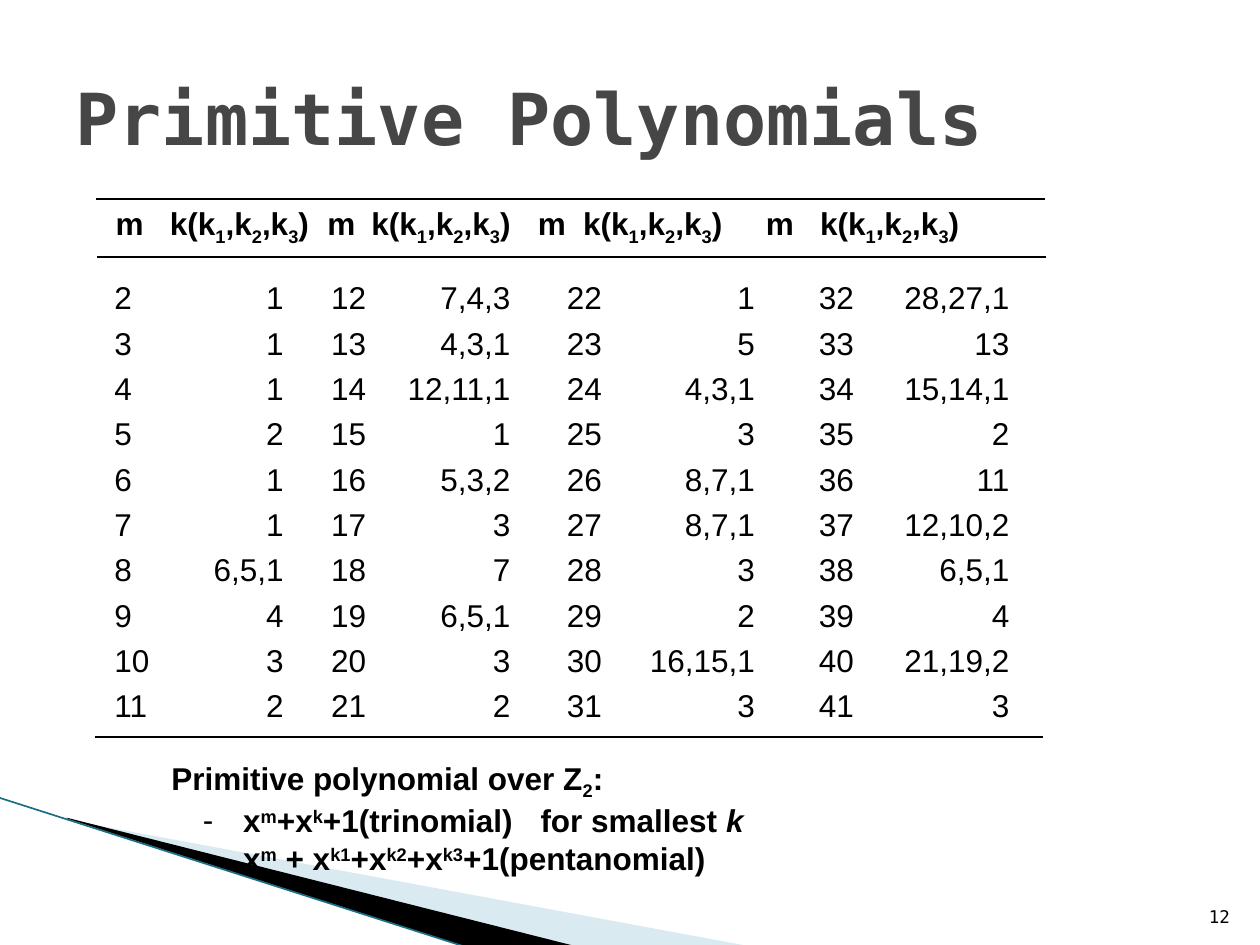
from pptx import Presentation
from pptx import util as u
from pptx.dml.color import RGBColor
from pptx.enum import shapes, text
from pptx.oxml import parse_xml
from pptx.oxml.ns import nsdecls, qn
from lxml import etree

BLACK = RGBColor(0x00, 0x00, 0x00)
GREY = RGBColor(0x46, 0x46, 0x46)
PALE_BLUE = RGBColor(0xA0, 0xCB, 0xDC)
EDGE_TEAL = RGBColor(0x1B, 0x6E, 0x87)
SANS, MONO = "Arial", "DejaVu Sans Mono"
SUB, SUPER = "-25000", "30000"


class SlideBuilder:
    """Holds the style and the current slide."""

    def __init__(self, deck):
        self.slide = deck.slides.add_slide(deck.slide_layouts[1])

    def format_span(self, span, size=18, font=SANS, color=BLACK, bold=False):
        span.font.size = u.Pt(size)
        span.font.name = font
        span.font.bold = bold
        span.font.color.rgb = color

    def scripted(self, para, content, baseline):
        """Every second part between bars is raised or lowered."""
        for index, part in enumerate(content.split("|")):
            span = para.add_run()
            span.text = part
            self.format_span(span, bold=True)
            if index % 2:
                span._r.get_or_add_rPr().set("baseline", baseline)

    def tab_stops(self, para, stops):
        tabs = etree.SubElement(para._p.get_or_add_pPr(), qn("a:tabLst"))
        for stop in stops:
            etree.SubElement(tabs, qn("a:tab"), pos=str(u.Inches(stop)), algn="l")

    def place(self, shape, left, top, width, height):
        shape.left, shape.top = u.Inches(left), u.Inches(top)
        shape.width, shape.height = u.Inches(width), u.Inches(height)
        self.slide.shapes._spTree.append(shape._element)  # bring to front

    def title(self, content, *area):
        box = self.slide.shapes.title
        self.place(box, *area)
        box.text_frame.text = content
        box.text_frame.vertical_anchor = text.MSO_ANCHOR.MIDDLE
        para = box.text_frame.paragraphs[0]
        para.alignment = text.PP_ALIGN.LEFT
        self.format_span(para.runs[0], 41, MONO, GREY, True)

    def body(self, heading, items, *area):
        box = self.slide.placeholders[1]
        self.place(box, *area)
        frame = box.text_frame
        frame.auto_size = text.MSO_AUTO_SIZE.NONE
        for index, content in enumerate([heading] + items):
            para = frame.add_paragraph() if index else frame.paragraphs[0]
            para.space_before = u.Pt(0)
            props = para._p.get_or_add_pPr()
            margin, indent = (0.57, -0.32) if index else (0, 0)
            props.set("marL", str(u.Inches(margin)))
            props.set("indent", str(u.Inches(indent)))
            if index:
                para.level = 1
                etree.SubElement(props, qn("a:buChar"), char="-")
            else:
                etree.SubElement(props, qn("a:buNone"))
            if "\t" in content:
                self.tab_stops(para, [2.93])
            self.scripted(para, content, SUPER if index else SUB)
        return frame

    def text_box(self, left, top, width, height):
        box = self.slide.shapes.add_textbox(
            u.Inches(left), u.Inches(top), u.Inches(width), u.Inches(height))
        box.text_frame.word_wrap = True
        return box.text_frame

    def column(self, left, width, values, alignment):
        frame = self.text_box(left, 2.1, width, 3.71)
        if alignment == text.PP_ALIGN.RIGHT:
            frame.margin_left = 0  # room for the longest exponents
        else:
            frame.margin_right = 0
        frame.text = "\n".join(values)
        for para in frame.paragraphs:
            para.alignment = alignment
            para.line_spacing = 1.2
            self.format_span(para.runs[0])

    def header(self, groups, stops, *area):
        para = self.text_box(*area).paragraphs[0]
        self.tab_stops(para, stops)
        self.scripted(para, "\t".join(groups), SUB)

    def page_number(self, number, *area):
        frame = self.text_box(*area)
        frame.vertical_anchor = text.MSO_ANCHOR.BOTTOM
        frame.text = number
        frame.paragraphs[0].alignment = text.PP_ALIGN.RIGHT
        self.format_span(frame.paragraphs[0].runs[0], 10, MONO)

    def line(self, x1, y1, x2, y2, color=BLACK, width=1):
        line = self.slide.shapes.add_connector(
            shapes.MSO_CONNECTOR.STRAIGHT,
            u.Inches(x1), u.Inches(y1), u.Inches(x2), u.Inches(y2))
        line.line.color.rgb = color
        line.line.width = u.Pt(width)
        line._element.spPr.append(parse_xml(f"<a:effectLst {nsdecls('a')}/>"))

    def wedge(self, points, color, alpha=None):
        corners = [(u.Inches(x), u.Inches(y)) for x, y in points]
        builder = self.slide.shapes.build_freeform(*corners[0])
        builder.add_line_segments(corners[1:], close=True)
        shape = builder.convert_to_shape()
        shape.shadow.inherit = False
        shape.fill.solid()
        shape.fill.fore_color.rgb = color
        shape.line.fill.background()
        if alpha:
            fill = shape._element.spPr.find(qn("a:solidFill"))
            etree.SubElement(fill[0], qn("a:alpha"), val=str(alpha * 1000))


def main():
    deck = Presentation()
    deck.slide_width, deck.slide_height = u.Inches(10), u.Inches(7.5)
    page = SlideBuilder(deck)

    # Corner decoration
    page.wedge([(0.55, 6.51), (5.95, 7.51), (4.56, 7.51), (0.55, 6.5)], PALE_BLUE, 40)
    page.wedge([(0.53, 6.49), (4.57, 7.51), (3.72, 7.52), (0.54, 6.5)], BLACK)
    page.line(-0.01, 6.33, 3.71, 7.52, EDGE_TEAL, 0.95)

    # Title, page number and explanation
    page.title("Primitive Polynomials", 0.5, 0.3, 9, 1.25)
    page.page_number("12", 9.46, 7.01, 0.4, 0.4)
    notes = page.body(
        "Primitive polynomial over Z|2|:",
        ["x|m|+x|k|+1(trinomial)\tfor smallest ",
         "x|m| + x|k1|+x|k2|+x|k3|+1(pentanomial)"],
        1.26, 5.97, 7.61, 1.23)
    variable = notes.paragraphs[1].add_run()
    variable.text = "k"
    page.format_span(variable, bold=True)
    variable.font.italic = True

    # Table header
    page.header(["m", "k(k|1|,k|2|,k|3|)"] * 4,
                [0.43, 1.68, 2.03, 3.35, 3.71, 5.16, 5.59],
                0.82, 1.57, 7.54, 0.62)

    # Degrees m and exponents k: first m, m left, k left, k width, k values
    blocks = [
        (2, 0.81, 1.59, 0.76, "1 1 1 2 1 1 6,5,1 4 3 2"),
        (12, 2.53, 3.12, 1.03, "7,4,3 4,3,1 12,11,1 1 5,3,2 3 7 6,5,1 3 2"),
        (22, 4.4, 5.06, 1.03, "1 5 4,3,1 3 8,7,1 8,7,1 3 2 16,15,1 3"),
        (32, 6.4, 7.08, 1.03, "28,27,1 13 15,14,1 2 11 12,10,2 6,5,1 4 21,19,2 3"),
    ]
    for first, m_left, k_left, k_width, exponents in blocks:
        degrees = [str(first + row) for row in range(10)]
        page.column(m_left, 0.48, degrees, text.PP_ALIGN.LEFT)
        page.column(k_left, k_width, exponents.split(), text.PP_ALIGN.RIGHT)

    # Table rules
    for left, top in [(0.76, 1.58), (0.77, 2.04), (0.75, 5.85)]:
        page.line(left, top, left + 7.53, top)

    deck.save("out.pptx")


if __name__ == "__main__":
    main()
